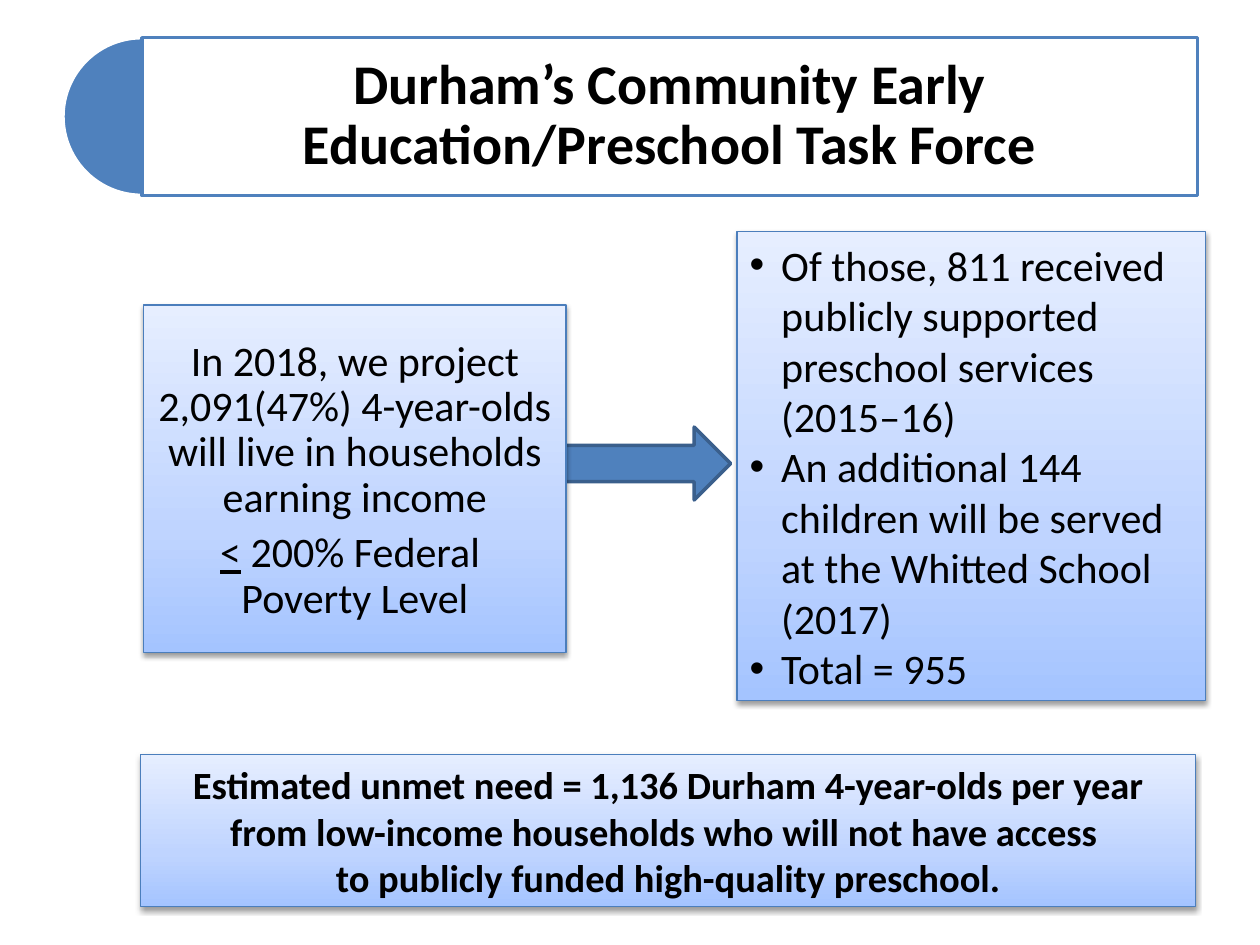
from copy import deepcopy

from lxml import etree
from pptx import Presentation
from pptx import util as u
from pptx.dml.color import RGBColor
from pptx.enum import shapes, text
from pptx.oxml.ns import qn

BLUE = RGBColor(0x4F, 0x81, 0xBD)
DARK_BLUE = RGBColor(0x3A, 0x5F, 0x8C)
EDGE_BLUE = RGBColor(0x4B, 0x7E, 0xBC)
WHITE = RGBColor(0xFF, 0xFF, 0xFF)
BLACK = RGBColor(0, 0, 0)
GRADIENT = (
    (0, RGBColor(0xA4, 0xC4, 0xFF)),
    (0.35, RGBColor(0xBF, 0xD4, 0xFF)),
    (1, RGBColor(0xE6, 0xEE, 0xFF)),
)
FONT = "Calibri"


def add_plain_shape(page, kind, place, fill, line):
    shape = page.shapes.add_shape(kind, *map(u.Cm, place))
    shape.shadow.inherit = False
    shape.fill.solid()
    shape.fill.fore_color.rgb = fill
    shape.line.color.rgb = line
    shape.line.width = u.Pt(2)
    return shape


def fill_gradient(shape):
    """Blend from the darkest blue at the bottom to the lightest at the top."""
    shape.fill.gradient()
    shape.fill.gradient_angle = 90
    stops = shape._element.spPr.find(".//" + qn("a:gsLst"))
    stops.append(deepcopy(stops[0]))
    for stop, (position, color) in zip(shape.fill.gradient_stops, GRADIENT):
        stop.position = position
        stop.color.rgb = color


def add_shadow(shape):
    shape.shadow.inherit = False
    effects = shape._element.spPr.find(qn("a:effectLst"))
    shadow = etree.SubElement(
        effects, qn("a:outerShdw"), blurRad=str(u.Pt(3.1)), dist=str(u.Pt(1.6)),
        dir="5400000", rotWithShape="0")
    color = etree.SubElement(shadow, qn("a:srgbClr"), val=str(BLACK))
    etree.SubElement(color, qn("a:alpha"), val="38000")


def add_panel(page, place, anchor=text.MSO_ANCHOR.MIDDLE):
    panel = page.shapes.add_shape(shapes.MSO_SHAPE.RECTANGLE, *map(u.Cm, place))
    fill_gradient(panel)
    panel.line.color.rgb = EDGE_BLUE
    panel.line.width = u.Pt(0.75)
    add_shadow(panel)
    panel.text_frame.word_wrap = True
    panel.text_frame.vertical_anchor = anchor
    return panel.text_frame


def style_paragraph(para, size, bold=False, align=text.PP_ALIGN.CENTER):
    para.alignment = align
    para.font.name = FONT
    para.font.size = u.Pt(size)
    para.font.bold = bold
    para.font.color.rgb = BLACK


def set_bullet(para):
    props = para._p.get_or_add_pPr()
    indent = u.Cm(0.64)
    props.set("marL", str(indent))
    props.set("indent", str(-indent))
    etree.SubElement(props, qn("a:buFont"), typeface="Arial")
    etree.SubElement(props, qn("a:buChar"), char="•")


def add_title(page, wording):
    half_disc = add_plain_shape(
        page, shapes.MSO_SHAPE.PIE, (1.27, 0.76, 3.18, 3.18), BLUE, WHITE)
    half_disc.adjustments[0] = 54
    half_disc.adjustments[1] = 162

    title = page.shapes.title
    half_disc._element.addnext(title._element)
    title.left, title.top, title.width, title.height = map(
        u.Cm, (2.86, 0.76, 21.28, 3.18))
    title.fill.solid()
    title.fill.fore_color.rgb = WHITE
    color = title._element.spPr.find(".//" + qn("a:srgbClr"))
    etree.SubElement(color, qn("a:alpha"), val="90000")
    title.line.color.rgb = BLUE
    title.line.width = u.Pt(2)

    frame = title.text_frame
    frame.text = wording
    frame.word_wrap = True
    frame.auto_size = text.MSO_AUTO_SIZE.NONE
    frame.vertical_anchor = text.MSO_ANCHOR.MIDDLE
    frame.margin_left = frame.margin_right = u.Cm(0.33)
    frame.margin_top = frame.margin_bottom = u.Cm(0.33)
    para = frame.paragraphs[0]
    style_paragraph(para, 32, bold=True)
    para.line_spacing = 0.9


def add_projection(page):
    frame = add_panel(page, (2.9, 6.15, 8.51, 7.01), text.MSO_ANCHOR.TOP)
    frame.margin_top = u.Cm(0.7)
    people = frame.paragraphs[0]
    people.text = ("In 2018, we project 2,091(47%) 4-year-olds "
                   "will live in households earning income")
    income = frame.add_paragraph()
    income.space_before = u.Pt(6)
    span = income.add_run()
    span.text = "<"
    span.font.underline = True
    income.add_run().text = " 200% Federal "
    income.add_line_break()
    income.add_run().text = "Poverty Level"
    for para in (people, income):
        style_paragraph(para, 24)
        para.line_spacing = 0.9


def add_services(page, items):
    frame = add_panel(page, (14.86, 4.67, 9.45, 9.45))
    for number, item in enumerate(items):
        para = frame.add_paragraph() if number else frame.paragraphs[0]
        para.text = item
        set_bullet(para)
        style_paragraph(para, 24, align=text.PP_ALIGN.LEFT)


def add_unmet_need(page, wording):
    frame = add_panel(page, (2.84, 15.21, 21.26, 3.07))
    para = frame.paragraphs[0]
    para.text = wording
    style_paragraph(para, 22, bold=True)


def main():
    deck = Presentation()
    deck.slide_width, deck.slide_height = u.Cm(25.4), u.Cm(19.05)
    page = deck.slides.add_slide(deck.slide_layouts.get_by_name("Title Only"))

    add_plain_shape(page, shapes.MSO_SHAPE.RIGHT_ARROW,
                    (11.35, 8.61, 3.38, 1.47), BLUE, DARK_BLUE)
    add_title(page, "Durham’s Community Early Education/Preschool Task Force")
    add_projection(page)
    add_services(page, (
        "Of those, 811 received publicly supported preschool services (2015‒16)",
        "An additional 144 children will be served at the Whitted School (2017)",
        "Total = 955",
    ))
    add_unmet_need(page, (
        "Estimated unmet need = 1,136 Durham 4-year-olds per year from "
        "low-income households who will not have access \v"
        "to publicly funded high-quality preschool."))
    deck.save("out.pptx")


if __name__ == "__main__":
    main()
